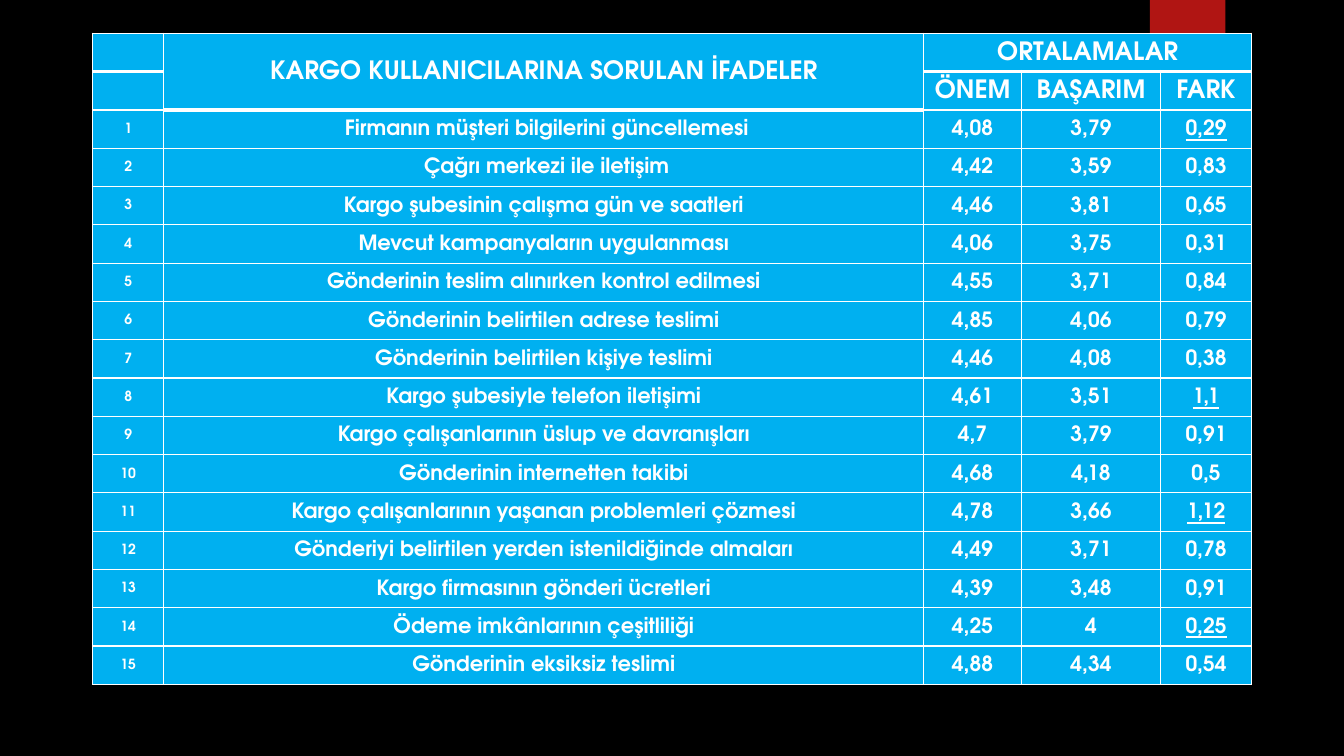
from lxml import etree
from pptx import Presentation
from pptx import util as u
from pptx.dml.color import RGBColor
from pptx.enum import shapes, text
from pptx.oxml.ns import qn

COLORS = {"background": "000000", "ribbon": "B01513", "cell": "00B0F0", "light": "FFFFFF"}
FONT = "TeX Gyre Adventor"
COLUMN_WIDTHS = [1.8, 19.15, 2.46, 3.51, 2.29]
TABLE_HEIGHT = 16.41
HEADER_ROWS = 2
HEADINGS = [
    ["", "KARGO KULLANICILARINA SORULAN İFADELER", "ORTALAMALAR", "", ""],
    ["", "", "ÖNEM", "BAŞARIM", "FARK"],
]
# Statement, importance, performance, difference
STATEMENTS = [
    (" Firmanın müşteri bilgilerini güncellemesi", "4,08", "3,79", "0,29"),
    (" Çağrı merkezi ile iletişim", "4,42", "3,59", "0,83"),
    ("Kargo şubesinin çalışma gün ve saatleri", "4,46", "3,81", "0,65"),
    ("Mevcut kampanyaların uygulanması", "4,06", "3,75", "0,31"),
    ("Gönderinin teslim alınırken kontrol edilmesi", "4,55", "3,71", "0,84"),
    ("Gönderinin belirtilen adrese teslimi", "4,85", "4,06", "0,79"),
    ("Gönderinin belirtilen kişiye teslimi", "4,46", "4,08", "0,38"),
    ("Kargo şubesiyle telefon iletişimi", "4,61", "3,51", "1,1"),
    ("Kargo çalışanlarının üslup ve davranışları", "4,7", "3,79", "0,91"),
    ("Gönderinin internetten takibi", "4,68", "4,18", "0,5"),
    ("Kargo çalışanlarının yaşanan problemleri çözmesi", "4,78", "3,66", "1,12"),
    ("Gönderiyi belirtilen yerden istenildiğinde almaları", "4,49", "3,71", "0,78"),
    ("Kargo firmasının gönderi ücretleri", "4,39", "3,48", "0,91"),
    ("Ödeme imkânlarının çeşitliliği", "4,25", "4", "0,25"),
    ("Gönderinin eksiksiz teslimi", "4,88", "4,34", "0,54"),
]
UNDERLINED = {"0,29", "1,1", "1,12", "0,25"}


def color(name):
    return RGBColor.from_string(COLORS[name])


def add_ribbon(slide):
    ribbon = slide.shapes.add_shape(
        shapes.MSO_SHAPE.RECTANGLE, u.Cm(28.98), 0, u.Cm(1.9), u.Cm(3.18))
    ribbon.shadow.inherit = False
    ribbon.fill.solid()
    ribbon.fill.fore_color.rgb = color("ribbon")
    ribbon.line.fill.background()


def is_heavy_below(row, column):
    return row == 0 or (row, column) == (1, 1)


def set_borders(cell, row, column):
    widths = {
        "a:lnL": 1,
        "a:lnR": 1,
        "a:lnT": 3 if is_heavy_below(row - 1, column) else 1,
        "a:lnB": 3 if is_heavy_below(row, column) else 1,
    }
    properties = cell._tc.get_or_add_tcPr()
    for side, width in widths.items():
        border = etree.SubElement(properties, qn(side), w=str(u.Pt(width)))
        paint = etree.SubElement(border, qn("a:solidFill"))
        etree.SubElement(paint, qn("a:srgbClr"), val=COLORS["light"])


def write_cell(cell, content, size, space_after):
    cell.margin_left = cell.margin_right = u.Cm(0.13)
    cell.margin_top = cell.margin_bottom = 0
    cell.vertical_anchor = text.MSO_ANCHOR.MIDDLE
    cell.fill.solid()
    cell.fill.fore_color.rgb = color("cell")
    cell.text_frame.text = content
    paragraph = cell.text_frame.paragraphs[0]
    paragraph.alignment = text.PP_ALIGN.CENTER
    paragraph.line_spacing = 1.07
    paragraph.space_after = u.Pt(space_after)
    for run in paragraph.runs:
        run.font.name = FONT
        run.font.size = u.Pt(size)
        run.font.bold = True
        run.font.color.rgb = color("light")
        if content in UNDERLINED:
            run.font.underline = True


def add_survey_table(slide):
    rows = HEADINGS + [[str(n), *entry] for n, entry in enumerate(STATEMENTS, 1)]
    survey = slide.shapes.add_table(
        len(rows), len(COLUMN_WIDTHS), u.Cm(2.33), u.Cm(0.84),
        u.Cm(sum(COLUMN_WIDTHS)), u.Cm(TABLE_HEIGHT)).table
    survey.first_row = survey.horz_banding = False
    for column, width in zip(survey.columns, COLUMN_WIDTHS):
        column.width = u.Cm(width)
    for row in survey.rows:
        row.height = u.Cm(TABLE_HEIGHT / len(rows))

    # Headings that span several cells
    survey.cell(0, 1).merge(survey.cell(1, 1))
    survey.cell(0, 2).merge(survey.cell(0, 4))

    for r, contents in enumerate(rows):
        for c, content in enumerate(contents):
            cell = survey.cell(r, c)
            set_borders(cell, r, c)
            if r < HEADER_ROWS:
                write_cell(cell, content, 18, 0)
            else:
                write_cell(cell, content, 10 if c == 0 else 15, 8)


def main():
    deck = Presentation()
    deck.slide_width, deck.slide_height = u.Cm(33.87), u.Cm(19.05)
    slide = deck.slides.add_slide(deck.slide_layouts[6])
    slide.background.fill.solid()
    slide.background.fill.fore_color.rgb = color("background")
    add_ribbon(slide)
    add_survey_table(slide)
    deck.save("out.pptx")


if __name__ == "__main__":
    main()
